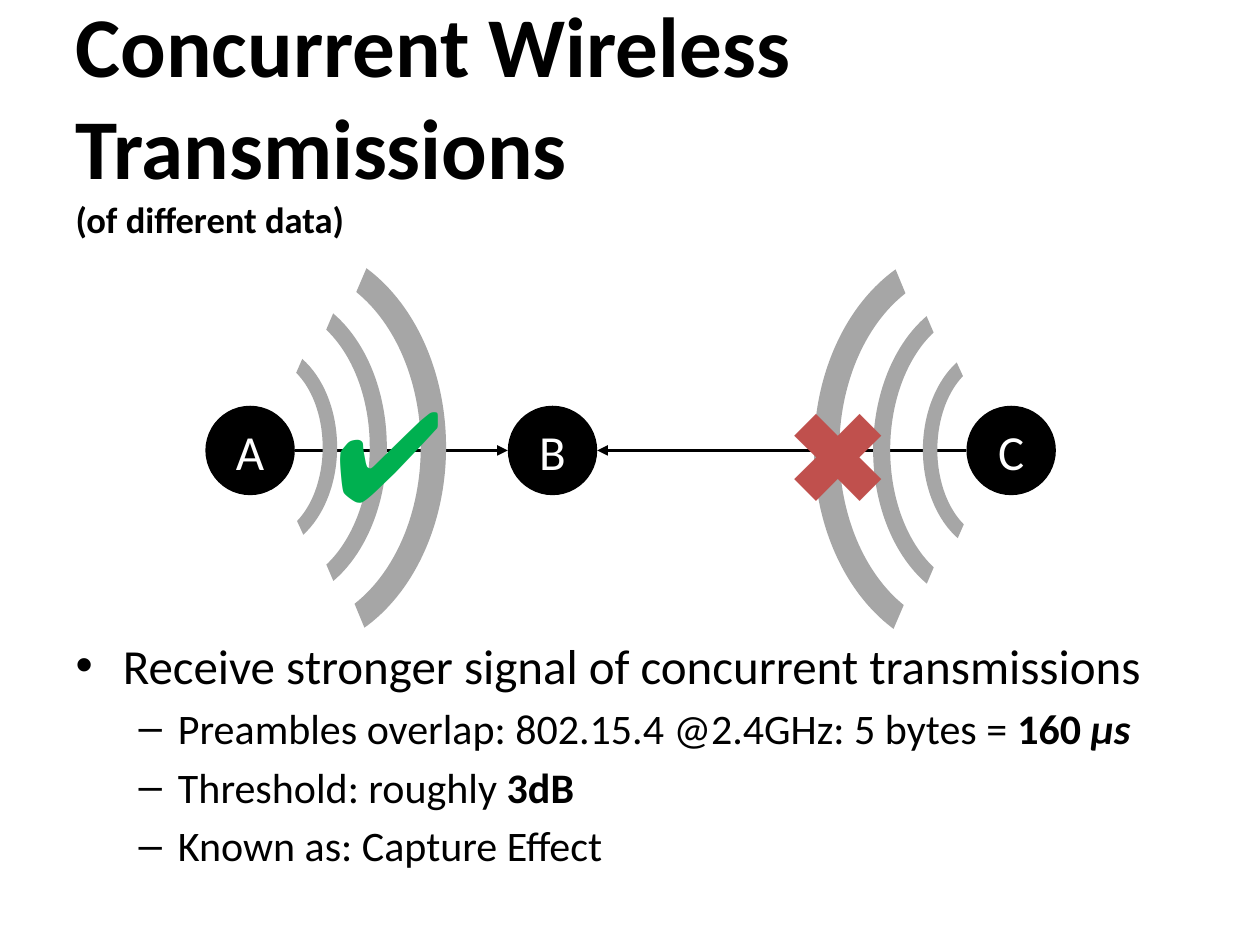
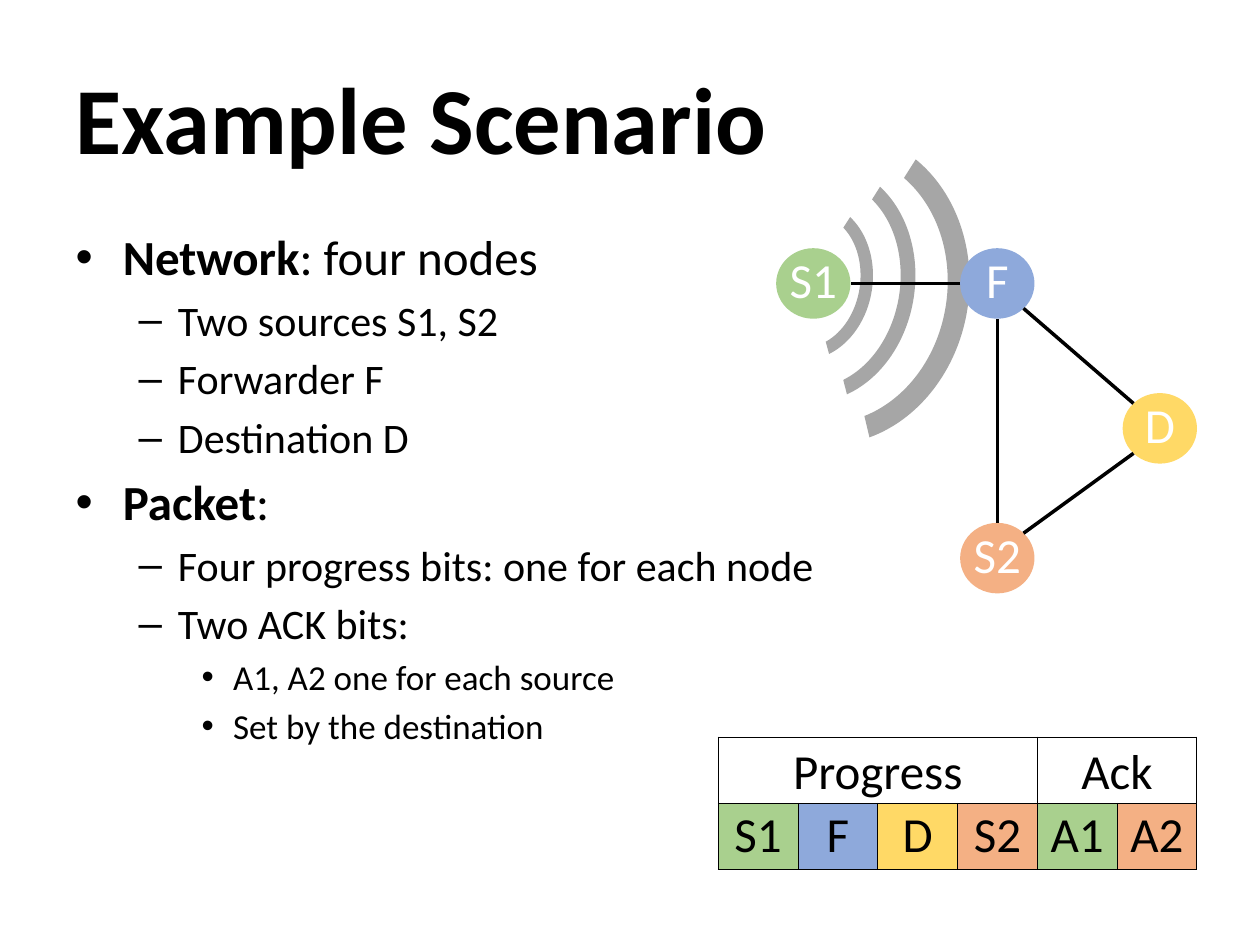
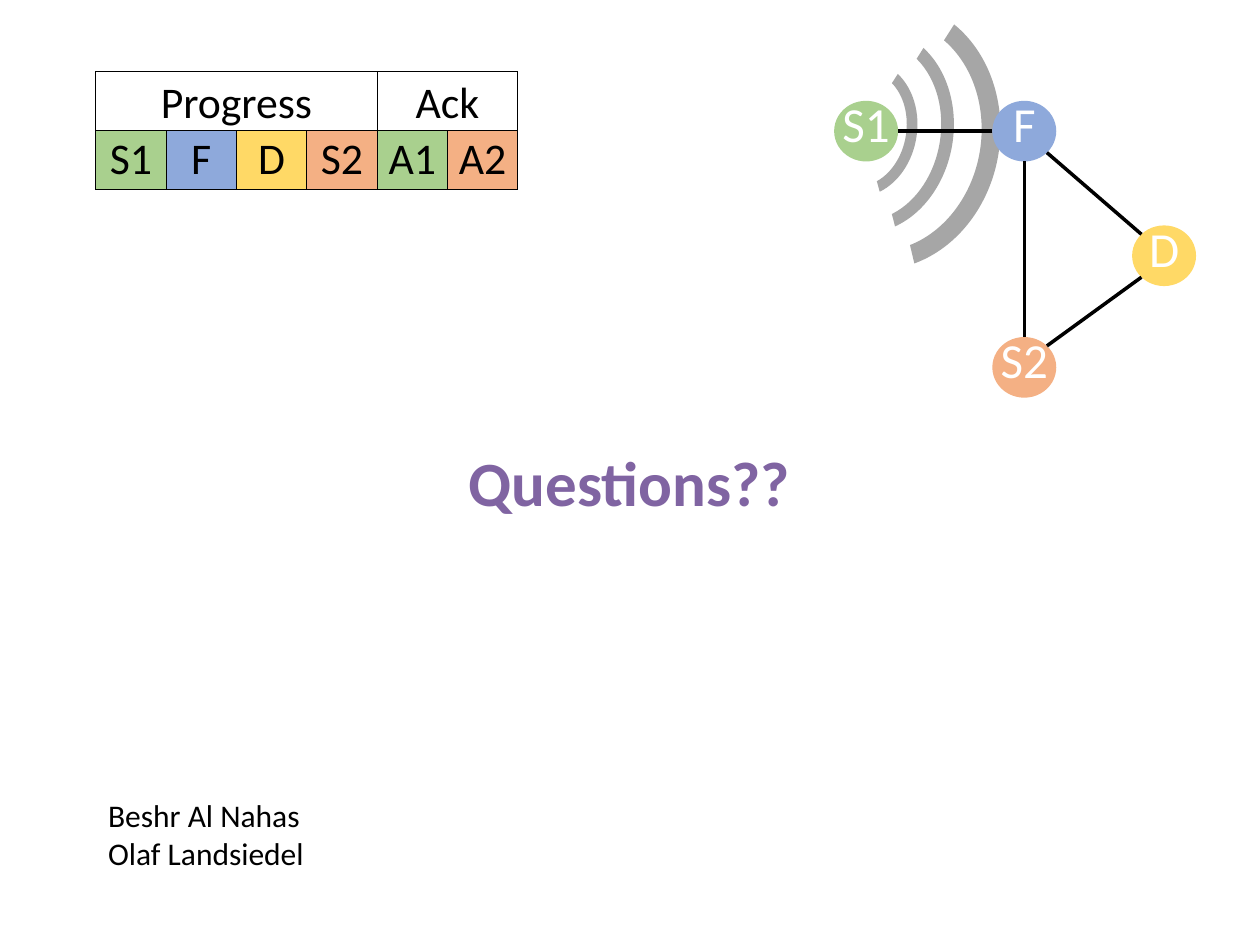
"""Build three slides on concurrent wireless transmissions."""
import dataclasses
import math

import pptx
import pptx.dml.color
import pptx.enum.shapes
import pptx.enum.text
import pptx.oxml
import pptx.oxml.ns
import pptx.util

Inches = pptx.util.Inches
Shape = pptx.enum.shapes.MSO_SHAPE
Align = pptx.enum.text.PP_ALIGN
Anchor = pptx.enum.text.MSO_ANCHOR
Fit = pptx.enum.text.MSO_AUTO_SIZE


@dataclasses.dataclass(frozen=True)
class Theme:
    """Hold the colours, font and type sizes."""
    font: str = "Calibri"
    black: str = "000000"
    white: str = "FFFFFF"
    wave: str = "A6A6A6"
    green: str = "A9D08E"
    blue: str = "8EA9DB"
    gold: str = "FFD966"
    peach: str = "F4B084"
    good: str = "00B050"
    bad: str = "C0504D"
    accent: str = "8064A2"
    title: float = 54
    tight: float = 48.6
    sub: float = 20.9
    levels: tuple = (28, 24, 20)
    node: float = 28
    mark: float = 72
    ask: float = 36
    small: float = 18
    stroke: float = 2


LOOK = Theme()
BENDS = ((122.25, 201.28, 0.098), (121.88, 202.06, 0.077), (121.9, 202.53, 0.081))
TOP, LEFT, BOTTOM, RIGHT = 270, 180, 90, 0


def color(code):
    """Turn a hex code into a colour."""
    return pptx.dml.color.RGBColor.from_string(code)


def write(para, text, size=18, fill=LOOK.black, bold=False, italic=False, align=None):
    """Add one formatted run to a paragraph."""
    run = para.add_run()
    run.text = text
    font = run.font
    font.name, font.size = LOOK.font, pptx.util.Pt(size)
    font.bold, font.italic = bold, italic
    font.color.rgb = color(fill)
    if align is not None:
        para.alignment = align


def place(shape, left, top, width, height):
    """Move and size a shape in inches."""
    shape.left, shape.top = Inches(left), Inches(top)
    shape.width, shape.height = Inches(width), Inches(height)


def site(node, angle):
    """Find the point on an ellipse at an angle in degrees."""
    turn = math.radians(angle)
    return (round(node.left + node.width / 2 * (1 + math.cos(turn))),
            round(node.top + node.height / 2 * (1 + math.sin(turn))))


class Deck:
    """Draw styled elements on the current slide."""

    def __init__(self, look):
        """Start an empty deck."""
        self.look = look
        self.deck = pptx.Presentation()
        self.deck.slide_width, self.deck.slide_height = Inches(10), Inches(7.5)
        self.slide = None

    def page(self, layout):
        """Add a slide and make it current."""
        self.slide = self.deck.slides.add_slide(self.deck.slide_layouts[layout])

    def title(self, text, size, sub=None):
        """Fill the title, with an optional smaller second line."""
        shape = self.slide.shapes.title
        place(shape, 0.5, 0.3, 9, 1.25)
        frame = shape.text_frame
        frame.auto_size = Fit.NONE
        para = frame.paragraphs[0]
        write(para, text, size=size, bold=True, align=Align.LEFT)
        if sub:
            para.add_line_break()
            write(para, sub, size=self.look.sub, bold=True)

    def bullets(self, top, height, items):
        """Fill the body with items of a level and its runs."""
        shape = self.slide.placeholders[1]
        place(shape, 0.5, top, 9, height)
        frame = shape.text_frame
        frame.auto_size = Fit.NONE
        for row, (level, *runs) in enumerate(items):
            para = frame.add_paragraph() if row else frame.paragraphs[0]
            para.level = level
            for text, style in runs:
                write(para, text, size=self.look.levels[level],
                      bold="b" in style, italic="i" in style)

    def box(self, left, top, width, height, lines, wrap=False, **form):
        """Add a text box with one paragraph a line."""
        shape = self.slide.shapes.add_textbox(
            Inches(left), Inches(top), Inches(width), Inches(height))
        frame = shape.text_frame
        frame.word_wrap = wrap
        frame.auto_size = Fit.SHAPE_TO_FIT_TEXT
        for row, line in enumerate(lines):
            para = frame.add_paragraph() if row else frame.paragraphs[0]
            write(para, line, **form)

    def solid(self, kind, left, top, width, height, fill):
        """Add a flat preset shape without an outline."""
        shape = self.slide.shapes.add_shape(
            kind, Inches(left), Inches(top), Inches(width), Inches(height))
        shape.shadow.inherit = False
        shape.fill.solid()
        shape.fill.fore_color.rgb = color(fill)
        shape.line.fill.background()
        return shape

    def node(self, name, left, top, width, height, fill, anchor=Anchor.BOTTOM):
        """Add a named network node."""
        shape = self.solid(Shape.OVAL, left, top, width, height, fill)
        frame = shape.text_frame
        frame.margin_left = frame.margin_right = 0
        frame.margin_top = frame.margin_bottom = 0
        frame.word_wrap, frame.vertical_anchor = False, anchor
        write(frame.paragraphs[0], name, size=self.look.node,
              fill=self.look.white, align=Align.CENTER)
        return shape

    def link(self, start, leave, end, enter, arrow=False):
        """Join two nodes at the given angles."""
        line = self.slide.shapes.add_connector(
            pptx.enum.shapes.MSO_CONNECTOR.STRAIGHT,
            *site(start, leave), *site(end, enter))
        line.line.color.rgb = color(self.look.black)
        line.line.width = pptx.util.Pt(self.look.stroke)
        if arrow:
            tip = pptx.oxml.parse_xml(
                f'<a:tailEnd {pptx.oxml.ns.nsdecls("a")} type="triangle"/>')
            line.line._get_or_add_ln().append(tip)
        line._element.spPr.append(
            pptx.oxml.parse_xml(f'<a:effectLst {pptx.oxml.ns.nsdecls("a")}/>'))

    def waves(self, turn, arcs):
        """Add radio waves from centres and sizes."""
        for (midx, midy, width, height), bend in zip(arcs, BENDS):
            arc = self.solid(Shape.BLOCK_ARC, midx - width / 2, midy - height / 2,
                             width, height, self.look.wave)
            arc.rotation = turn
            for spot, value in enumerate(bend):
                arc.adjustments[spot] = value

    def net(self, left, top, scale=1):
        """Draw the four-node network from the corner of S1."""
        look = self.look
        arcs = ((0.26, 0.26, 1.26, 1.01), (0.34, 0.28, 1.89, 1.52),
                (0.46, 0.32, 2.49, 2.14))
        self.waves(99.1, [(left + x * scale, top + y * scale, w * scale, h * scale)
                          for x, y, w, h in arcs])
        spots = {"F": (1.46, 0, look.blue), "D": (2.75, 1.15, look.gold),
                 "S2": (1.46, 2.18, look.peach), "S1": (0, 0, look.green)}
        nodes = {name: self.node(name, left + x * scale, top + y * scale,
                                 0.59 * scale, 0.56 * scale, fill)
                 for name, (x, y, fill) in spots.items()}
        for start, leave, end, enter in (("S2", TOP, "F", BOTTOM), ("D", 225, "F", 45),
                                         ("D", 135, "S2", 315), ("F", LEFT, "S1", RIGHT)):
            self.link(nodes[start], leave, nodes[end], enter)

    def cell(self, cell, text, size, anchor, fill=None):
        """Format one table cell with thin borders."""
        cell.margin_left = cell.margin_right = 0
        cell.margin_top = cell.margin_bottom = 0
        cell.vertical_anchor = anchor
        props = cell._tc.get_or_add_tcPr()
        for side in "LRTB":
            props.append(pptx.oxml.parse_xml(
                f'<a:ln{side} {pptx.oxml.ns.nsdecls("a")} w="6350"><a:solidFill>'
                f'<a:srgbClr val="{self.look.black}"/></a:solidFill></a:ln{side}>'))
        if fill:
            cell.fill.solid()
            cell.fill.fore_color.rgb = color(fill)
        else:
            cell.fill.background()
        if text:
            write(cell.text_frame.paragraphs[0], text, size=size, align=Align.CENTER)

    def packet(self, left, top, width, height, size):
        """Add the table of packet bits."""
        look = self.look
        heads = ("Progress", "", "", "", "Ack", "")
        bits = (("S1", look.green), ("F", look.blue), ("D", look.gold),
                ("S2", look.peach), ("A1", look.green), ("A2", look.peach))
        table = self.slide.shapes.add_table(
            2, len(bits), Inches(left), Inches(top), Inches(width), Inches(height)).table
        table.first_row = table.horz_banding = False
        for col, (head, (bit, fill)) in enumerate(zip(heads, bits)):
            self.cell(table.cell(0, col), head, size, Anchor.BOTTOM)
            self.cell(table.cell(1, col), bit, size, Anchor.MIDDLE, fill)
        table.cell(0, 0).merge(table.cell(0, 3))
        table.cell(0, 4).merge(table.cell(0, 5))


def capture(deck):
    """Build the slide on the capture effect."""
    look = deck.look
    deck.page(1)
    deck.title("Concurrent Wireless Transmissions", look.tight, "(of different data)")
    deck.bullets(4.99, 2.51, (
        (0, ("Receive stronger signal of concurrent transmissions", "")),
        (1, ("Preambles overlap: 802.15.4 @2.4GHz: 5 bytes = ", ""),
         ("160 ", "b"), ("µs", "bi")),
        (1, ("Threshold: roughly ", ""), ("3dB", "b")),
        (1, ("Known as: Capture Effect", ""))))
    first, mid, last = (deck.node(name, left, 3.22, 0.71, 0.71, look.black, Anchor.MIDDLE)
                        for name, left in (("A", 1.63), ("B", 4.03), ("C", 7.67)))
    deck.link(last, LEFT, mid, RIGHT, arrow=True)
    deck.link(first, RIGHT, mid, LEFT, arrow=True)
    arcs = ((2.91, 1.65, 1.17), (2.81, 2.48, 1.76), (2.7, 3.26, 2.48))
    for turn, side, midy in ((90, -1, 3.55), (270, 1, 3.57)):
        deck.waves(turn, [(5 + side * gap, midy, width, height)
                          for gap, width, height in arcs])
    for sign, left, fill in (("✔", 2.56, look.good), ("✖", 6.16, look.bad)):
        deck.box(left, 2.93, 1.21, 1.31, [sign], size=look.mark, fill=fill)


def example(deck):
    """Build the slide with the example network."""
    deck.page(1)
    deck.title("Example Scenario", deck.look.title)
    deck.bullets(1.75, 5.31, (
        (0, ("Network", "b"), (": four nodes", "")),
        (1, ("Two sources S1, S2", "")),
        (1, ("Forwarder F", "")),
        (1, ("Destination D", "")),
        (0, ("Packet", "b"), (":", "")),
        (1, ("Four progress bits: one for each node", "")),
        (1, ("Two ACK bits:", "")),
        (2, ("A1, A2 one for each source", "")),
        (2, ("Set by the destination", ""))))
    deck.net(6.16, 1.97)
    deck.packet(5.7, 5.85, 3.8, 1.05, 28)


def closing(deck):
    """Build the slide that asks for questions."""
    look = deck.look
    deck.page(6)
    deck.box(0.76, 6.27, 1.83, 0.71, ["Beshr Al Nahas", "Olaf Landsiedel"], size=look.small)
    deck.box(3.59, 3.47, 2.81, 0.71, ["Questions??"], wrap=True, size=look.ask,
             fill=look.accent, bold=True, align=Align.CENTER)
    deck.net(6.62, 0.8, 0.86)
    deck.packet(0.76, 0.57, 3.35, 0.93, 25)


def main():
    """Build and save the deck."""
    deck = Deck(LOOK)
    for build in (capture, example, closing):
        build(deck)
    deck.deck.save("out.pptx")


if __name__ == "__main__":
    main()
